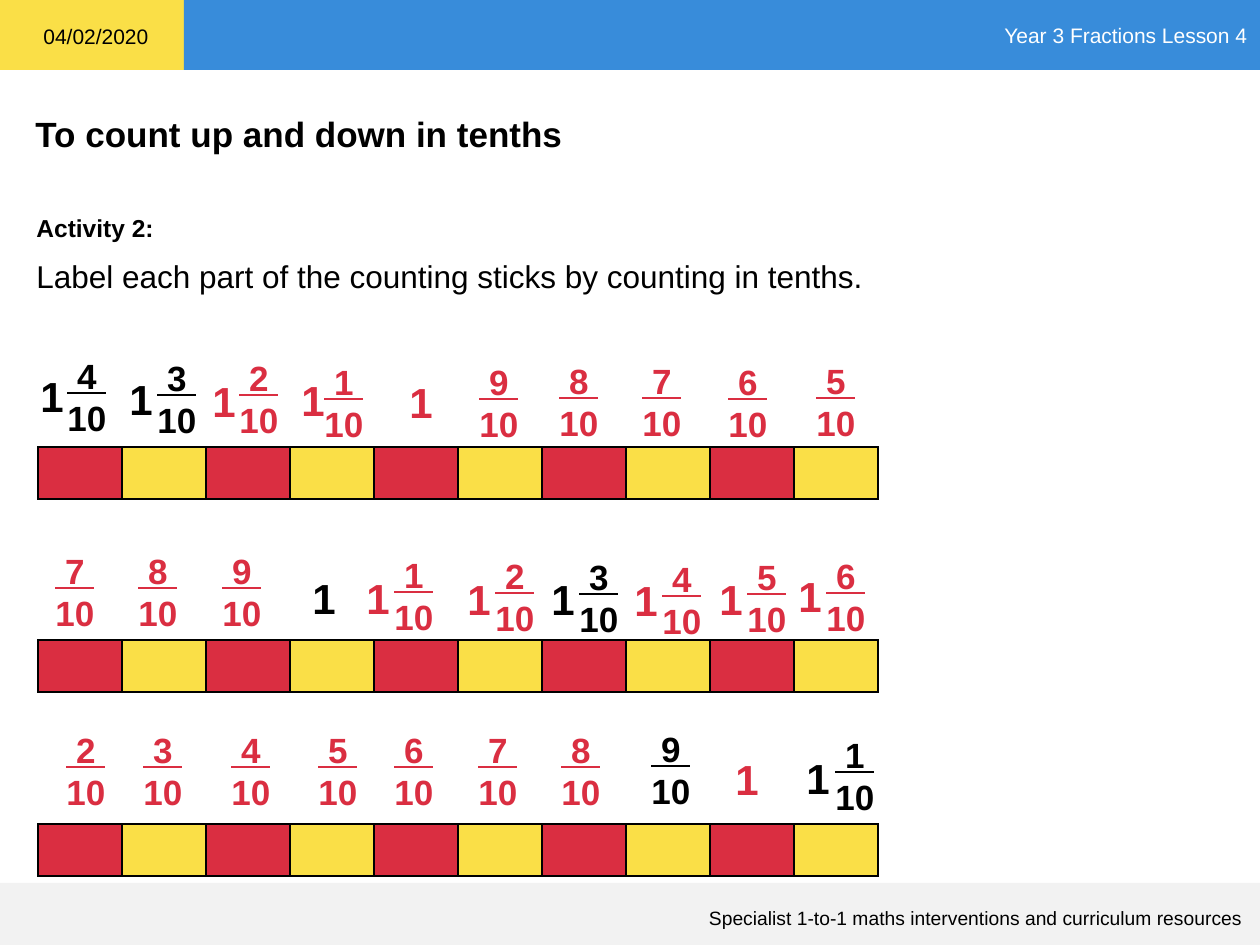
from lxml.etree import SubElement
from pptx import Presentation
from pptx.dml.color import RGBColor
from pptx.enum.shapes import MSO_SHAPE
from pptx.enum.text import MSO_ANCHOR, PP_ALIGN
from pptx.oxml.ns import qn
from pptx.util import Emu, Pt

RED = RGBColor(0xDA, 0x2E, 0x41)
GOLD = RGBColor(0xFA, 0xDF, 0x47)
BLUE = RGBColor(0x38, 0x8C, 0xDA)
GREY = RGBColor(0xF2, 0xF2, 0xF2)
BLACK = RGBColor(0, 0, 0)
WHITE = RGBColor(255, 255, 255)
SCALE = 914400 / 126

BANDS = [
    (0, 0, 184, 70, GOLD),
    (184, 0, 1076, 70, BLUE),
    (-5, 883, 1265, 69, GREY),
]
HEADS = [
    ("To count up and down in tenths", (23, 106, 1231, 55), 20, True),
    ("04/02/2020", (31, 17, 131, 38), 12, False),
    ("Activity 2:", (24, 207, 144, 43), 14, True),
    ("Label each part of the counting sticks by counting in tenths.",
     (24, 251, 905, 50), 18, False),
]
STICKS = [
    {
        "top": 447,
        "tenths": [
            (4, 55, 348, BLACK), (3, 145, 350, BLACK), (2, 227, 350, RED),
            (1, 312, 354, RED), (9, 467, 354, RED), (8, 547, 353, RED),
            (7, 630, 353, RED), (6, 716, 354, RED), (5, 804, 353, RED),
        ],
        "ones": [
            (28, 364, BLACK), (117, 367, BLACK), (200, 369, RED),
            (289, 368, RED), (397, 370, RED),
        ],
    },
    {
        "top": 640,
        "tenths": [
            (7, 43, 543, RED), (8, 126, 543, RED), (9, 210, 543, RED),
            (1, 382, 547, RED), (2, 483, 548, RED), (3, 567, 549, BLACK),
            (4, 650, 551, RED), (5, 735, 549, RED), (6, 814, 548, RED),
        ],
        "ones": [
            (300, 566, BLACK), (354, 566, RED), (455, 567, RED),
            (539, 567, BLACK), (622, 568, RED), (707, 567, RED),
            (786, 564, RED),
        ],
    },
    {
        "top": 824,
        "tenths": [
            (2, 54, 722, RED), (3, 131, 722, RED), (4, 219, 722, RED),
            (5, 306, 722, RED), (6, 382, 722, RED), (7, 466, 722, RED),
            (8, 549, 722, RED), (9, 639, 721, BLACK), (1, 823, 727, BLACK),
        ],
        "ones": [(723, 747, RED), (794, 746, BLACK)],
    },
]
LEFT, CELL, TALL, PARTS = 38, 84, 52, 10


def px(n):
    return Emu(round(n * SCALE))


def style(para, size, color, bold=False):
    for run in para.runs:
        font = run.font
        font.name, font.size, font.bold = "Arial", Pt(size), bold
        font.color.rgb = color


def add_band(x, y, w, h, color):
    band = slide.shapes.add_shape(MSO_SHAPE.RECTANGLE, *map(px, (x, y, w, h)))
    band.shadow.inherit = False
    band.fill.solid()
    band.fill.fore_color.rgb = color
    band.line.fill.background()
    return band


def add_text(text, spot, size, color, bold=False, wrap=False):
    frame = slide.shapes.add_textbox(*map(px, spot)).text_frame
    frame.word_wrap = wrap
    frame.text = text
    for para in frame.paragraphs:
        style(para, size, color, bold)
    return frame


def add_stick(top):
    spot = map(px, (LEFT, top, CELL * PARTS, TALL))
    table = slide.shapes.add_table(1, PARTS, *spot).table
    table.first_row = table.horz_banding = False
    for i, cell in enumerate(table.iter_cells()):
        table.columns[i].width = px(CELL)
        props = cell._tc.get_or_add_tcPr()
        for side in ("a:lnL", "a:lnR", "a:lnT", "a:lnB"):
            line = SubElement(props, qn(side), w=str(Pt(1)))
            fill = SubElement(line, qn("a:solidFill"))
            SubElement(fill, qn("a:srgbClr"), val=str(BLACK))
        cell.fill.solid()
        cell.fill.fore_color.rgb = GOLD if i % 2 else RED


deck = Presentation()
deck.slide_width, deck.slide_height = px(1260), px(945)
slide = deck.slides.add_slide(deck.slide_layouts[6])

bands = [add_band(*band) for band in BANDS]
title = bands[1].text_frame
title.text = "Year 3 Fractions Lesson 4"
title.vertical_anchor = MSO_ANCHOR.MIDDLE
title.paragraphs[0].alignment = PP_ALIGN.RIGHT
style(title.paragraphs[0], 12, WHITE)

foot = add_text("Specialist 1-to-1 maths interventions and curriculum resources",
                (53, 873, 1202, 115), 11, BLACK, wrap=True)
foot.vertical_anchor = MSO_ANCHOR.MIDDLE
foot.margin_bottom = px(31)
foot.paragraphs[0].alignment = PP_ALIGN.RIGHT

for text, spot, size, bold in HEADS:
    add_text(text, spot, size, BLACK, bold, wrap=spot[2] > 200)

for stick in STICKS:
    add_stick(stick["top"])
    for num, x, y, color in stick["tenths"]:
        frame = add_text(f" {num} \n10", (x, y, 64, 97), 20, color, True)
        frame.paragraphs[0].runs[0].font.underline = True
    for x, y, color in stick["ones"]:
        add_text("1", (x, y, 49, 63), 24, color, True)

deck.save("out.pptx")
